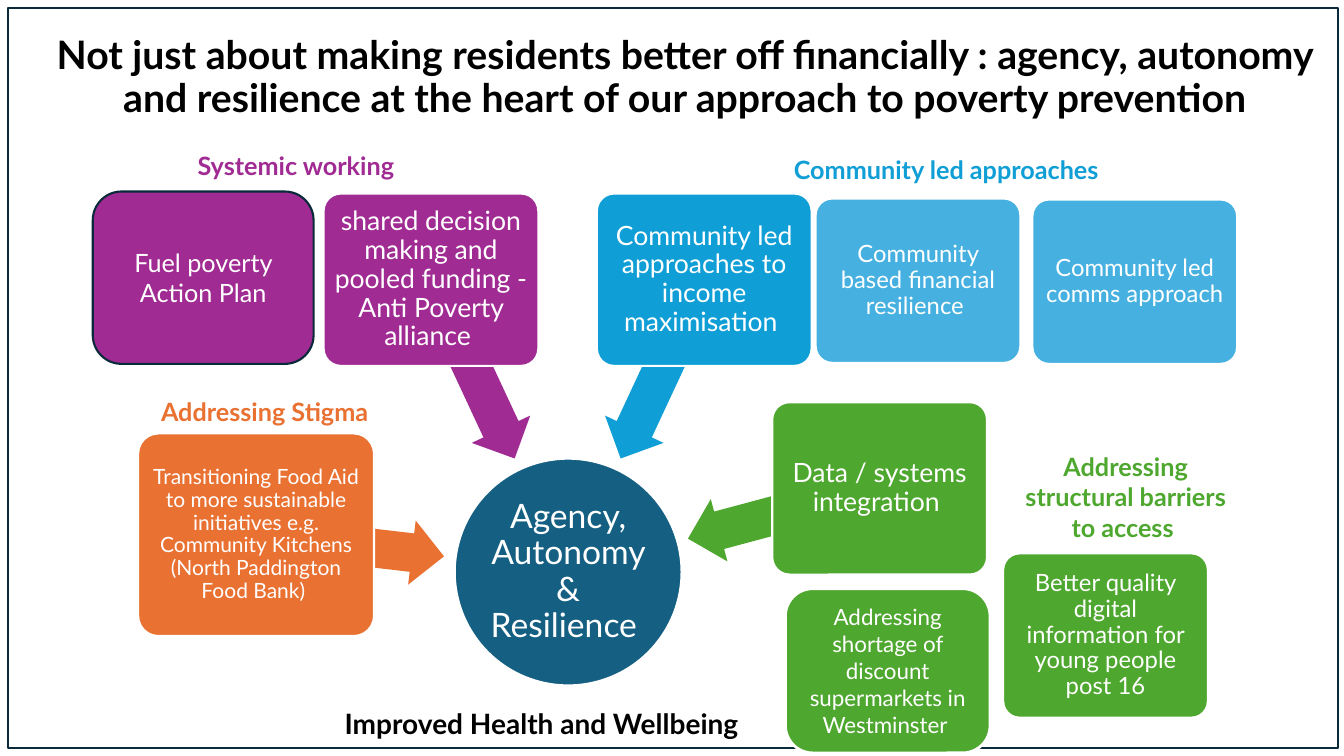
from pptx import Presentation
from pptx import util as u
from pptx.dml.color import RGBColor
from pptx.enum import shapes, text

FONT = "Lato"
WHITE, BLACK, NAVY, TEAL = "FFFFFF", "000000", "092A39", "156082"
PURPLE, BLUE, SKY, GREEN, ORANGE = "A02B93", "0F9ED5", "46B1E1", "4EA72E", "E97132"
KIND = shapes.MSO_SHAPE


def color(value):
    return RGBColor.from_string(value)


def write(shape, words, size, ink=WHITE, bold=False, spacing=None,
          inset=None, middle=True):
    frame = shape.text_frame
    frame.word_wrap = True
    anchors = text.MSO_ANCHOR
    frame.vertical_anchor = anchors.MIDDLE if middle else anchors.TOP
    if inset is not None:
        frame.margin_left = frame.margin_right = u.Inches(inset)
        frame.margin_top = frame.margin_bottom = u.Inches(inset)
    para = frame.paragraphs[0]
    para.alignment = text.PP_ALIGN.CENTER
    if spacing:
        para.line_spacing = spacing
    span = para.add_run()
    span.text = words
    span.font.name = FONT
    span.font.size = u.Pt(size)
    span.font.bold = bold
    span.font.color.rgb = color(ink)


def add_shape(page, kind, place, fill=None, line=None, width=1.5):
    shape = page.shapes.add_shape(kind, *map(u.Inches, place))
    shape.shadow.inherit = False
    if fill:
        shape.fill.solid()
        shape.fill.fore_color.rgb = color(fill)
    else:
        shape.fill.background()
    if line:
        shape.line.color.rgb = color(line)
        shape.line.width = u.Pt(width)
    else:
        shape.line.fill.background()
    return shape


def add_label(page, place, words, size, ink, **style):
    box = page.shapes.add_textbox(*map(u.Inches, place))
    write(box, words, size, ink, bold=True, **style)


def add_arrow(page, place, angle, fill):
    arrow = add_shape(page, KIND.LEFT_ARROW, place, fill)
    arrow.adjustments[0], arrow.adjustments[1] = 0.6, 0.5
    arrow.rotation = angle


def add_card(page, place, fill, words, size):
    card = add_shape(page, KIND.ROUNDED_RECTANGLE, place, fill, WHITE)
    card.adjustments[0] = 0.1
    write(card, words, size, spacing=0.9, inset=0.04)


def add_round_card(page, place, fill, line, width, words, size):
    card = add_shape(page, KIND.ROUNDED_RECTANGLE, place, fill, line, width)
    write(card, words, size)


def main():
    deck = Presentation()
    deck.slide_width, deck.slide_height = u.Inches(13.33), u.Inches(7.5)
    page = deck.slides.add_slide(deck.slide_layouts[6])

    # Title and page frame
    add_label(page, (0.31, 0.05, 12.96, 1.45),
              "Not just about making residents better off financially : agency, "
              "autonomy and resilience at the heart of our approach to poverty "
              "prevention", 28, BLACK, spacing=0.9)
    add_shape(page, KIND.RECTANGLE, (0.08, 0.08, 13.19, 7.34), line=NAVY)

    # Central goal
    goal = add_shape(page, KIND.OVAL, (4.51, 4.55, 2.25, 2.25), TEAL, WHITE)
    write(goal, "Agency, Autonomy & Resilience ", 24, spacing=0.9, inset=0.02)

    # Arrows towards the goal, behind the cards
    for left, top, width, angle, fill in [
        (2.53, 5.09, 1.88, 186.7, ORANGE),
        (3.71, 3.34, 1.96, 245, PURPLE),
        (5.59, 3.34, 1.96, 295, BLUE),
        (6.79, 4.77, 1.96, 345, GREEN),
    ]:
        add_arrow(page, (left, top, width, 0.64), angle, fill)

    # Approach cards: large ones lead to the goal, small ones support them
    large, small = (2.13, 1.71), (2.03, 1.63)
    for left, top, extent, fill, words, size in [
        (1.37, 4.3, (2.34, 2.01), ORANGE,
         "Transitioning Food Aid to more sustainable initiatives e.g. "
         "Community Kitchens (North Paddington Food Bank) ", 15),
        (3.21, 1.92, large, PURPLE,
         "shared decision making and pooled funding - Anti Poverty alliance ", 19),
        (5.92, 1.92, large, BLUE,
         "Community led approaches to income maximisation ", 19),
        (7.66, 3.99, large, GREEN, "Data / systems integration ", 19),
        (9.95, 5.49, small, GREEN,
         "Better quality digital information for young people post 16", 17),
        (8.09, 1.97, small, SKY, "Community based financial resilience ", 17),
        (10.24, 1.98, small, SKY, "Community led comms approach", 17),
    ]:
        add_card(page, (left, top, *extent), fill, words, size)

    # Cards with rounder corners
    add_round_card(page, (7.79, 5.84, *small), GREEN, WHITE, 2,
                   "Addressing shortage of discount supermarkets in Westminster ", 16)
    add_round_card(page, (0.92, 1.9, 2.19, 1.71), PURPLE, NAVY, 1.5,
                   "Fuel poverty Action Plan", 18)

    # Theme headings and outcome
    for place, words, size, ink in [
        ((1.34, 6.96, 8.13, 0.44), "Improved Health and Wellbeing ", 20, BLACK),
        ((1.55, 1.44, 2.83, 0.4), "Systemic working ", 18, PURPLE),
        ((1.21, 3.88, 2.83, 0.4), "Addressing Stigma", 18, ORANGE),
        ((7.69, 1.48, 3.39, 0.4), "Community led approaches", 18, BLUE),
        ((9.95, 4.43, 2.43, 1.01),
         "Addressing structural barriers to access ", 18, GREEN),
    ]:
        add_label(page, place, words, size, ink, middle=False)

    deck.save("out.pptx")


if __name__ == "__main__":
    main()
